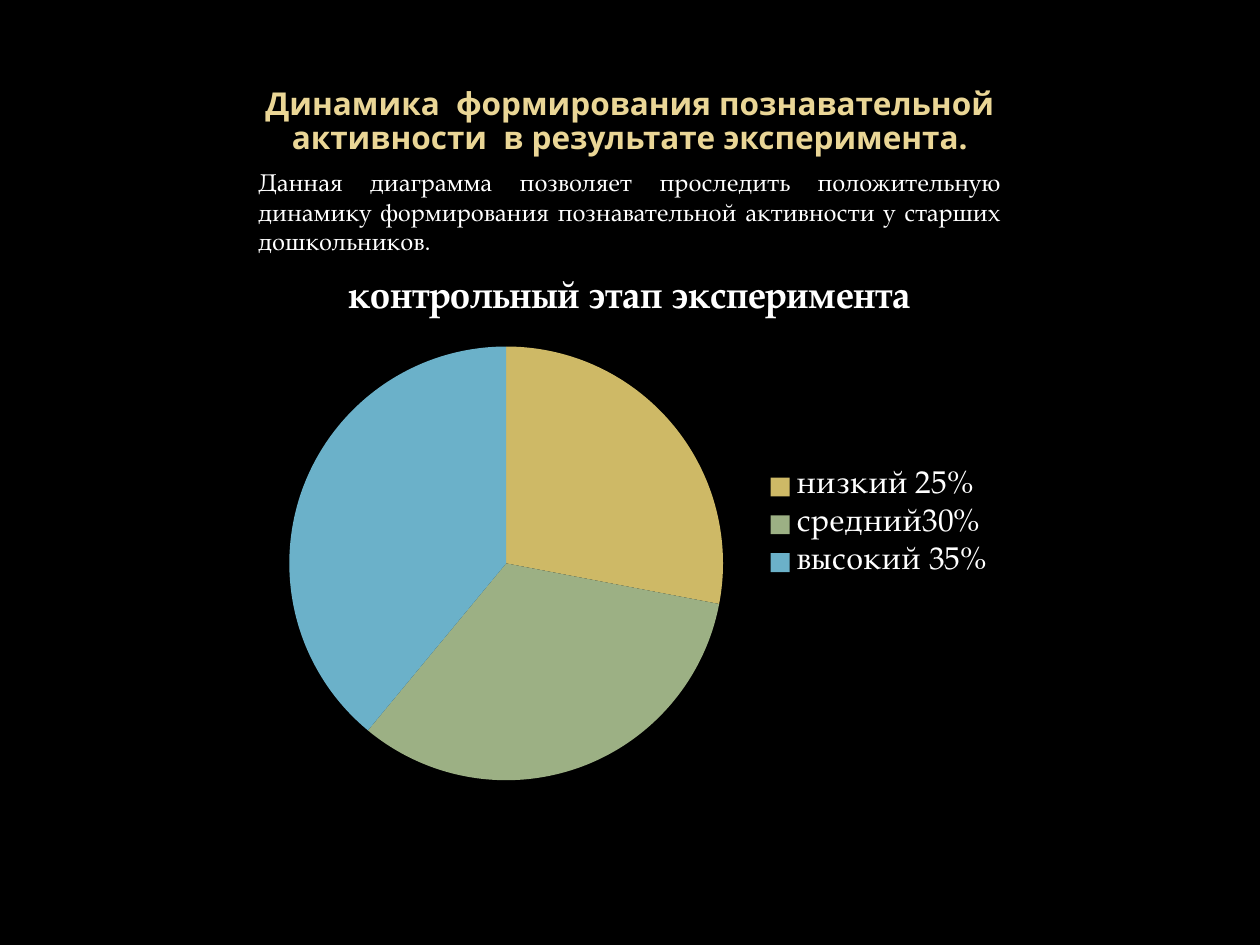
import pptx
import pptx.chart.data
import pptx.dml.color
import pptx.enum.chart
import pptx.enum.text
import pptx.util

Cm, Pt = pptx.util.Cm, pptx.util.Pt
ALIGN = pptx.enum.text.PP_ALIGN
ANCHOR = pptx.enum.text.MSO_ANCHOR

HUES = {"back": "000000", "head": "EAD696", "text": "FFFFFF",
        "low": "CEB966", "mid": "9CB084", "high": "6BB1C9"}
SERIF, SANS = "TeX Gyre Pagella", "Open Sans"

HEAD = "Динамика  формирования познавательной активности  в результате эксперимента."
NOTE = ("Данная диаграмма позволяет проследить положительную динамику "
        "формирования познавательной активности у старших дошкольников.")
STAGE = "контрольный этап эксперимента"
LEVELS = [("низкий 25%", 28, "low"),
          ("средний30%", 33, "mid"),
          ("высокий 35%", 39, "high")]

LEFT, WIDE = Cm(5.08), Cm(15.24)
PAD = Cm(0.13)


def paint(fill, hue):
    fill.solid()
    fill.fore_color.rgb = pptx.dml.color.RGBColor.from_string(HUES[hue])


def style(font, face, size, hue, bold=False):
    font.name, font.size, font.bold = face, Pt(size), bold
    paint(font.fill, hue)


def write(slide, top, high, text, look, align, anchor, foot):
    """Add a one-paragraph text box and return its paragraph."""
    frame = slide.shapes.add_textbox(LEFT, top, WIDE, high).text_frame
    frame.word_wrap = True
    frame.vertical_anchor = anchor
    frame.margin_left = frame.margin_right = frame.margin_top = PAD
    frame.margin_bottom = foot
    para = frame.paragraphs[0]
    para.alignment = align
    run = para.add_run()
    run.text = text
    style(run.font, *look)
    return para


def plot(slide):
    data = pptx.chart.data.CategoryChartData()
    data.categories = [name for name, _, _ in LEVELS]
    data.add_series(STAGE, [share for _, share, _ in LEVELS])
    chart = slide.shapes.add_chart(
        pptx.enum.chart.XL_CHART_TYPE.PIE,
        LEFT, Cm(5.08), WIDE, Cm(11), data).chart
    style(chart.font, SERIF, 18, "text")

    chart.has_title = True
    run = chart.chart_title.text_frame.paragraphs[0].add_run()
    run.text = STAGE
    style(run.font, SERIF, 21.6, "text", True)
    chart.chart_title.include_in_layout = False

    chart.has_legend = True
    chart.legend.position = pptx.enum.chart.XL_LEGEND_POSITION.RIGHT
    chart.legend.include_in_layout = False

    pie = chart.plots[0]
    pie.vary_by_categories = True
    for i, (_, _, hue) in enumerate(LEVELS):
        form = pie.series[0].points[i].format
        paint(form.fill, hue)
        form.line.fill.background()


def main():
    deck = pptx.Presentation()
    deck.slide_width, deck.slide_height = Cm(25.4), Cm(19.05)
    slide = deck.slides.add_slide(deck.slide_layouts[6])
    paint(slide.background.fill, "back")

    head = write(slide, Cm(1.7), Cm(1.45), HEAD, (SANS, 18, "head", True),
                 ALIGN.CENTER, ANCHOR.BOTTOM, 0)
    head.line_spacing = 0.9
    plot(slide)
    note = write(slide, Cm(3.25), Cm(1.47), NOTE, (SERIF, 13.9, "text"),
                 ALIGN.JUSTIFY, ANCHOR.TOP, PAD)
    note.space_before = Pt(2.8)
    deck.save("out.pptx")


if __name__ == "__main__":
    main()
